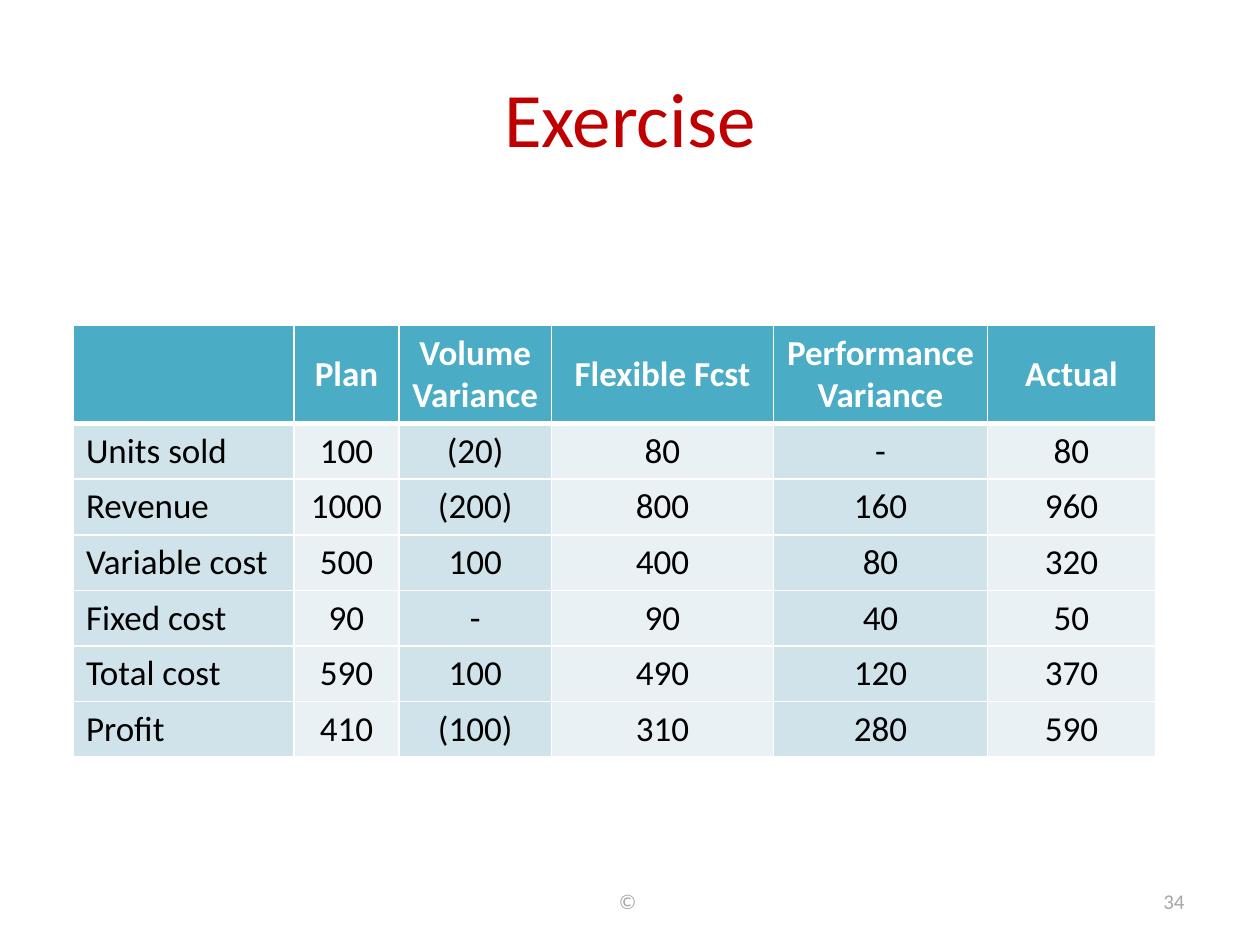
from lxml.etree import SubElement
from pptx import Presentation
from pptx.dml.color import RGBColor
from pptx.enum.text import MSO_ANCHOR as Anchor, PP_ALIGN as Align
from pptx.oxml.ns import qn
from pptx.util import Cm, Pt

FONT = "Calibri"
COLORS = {
    "title": "C00000",
    "footer": "A6A6A6",
    "header": "4BACC6",
    "odd_col": "D0E3EA",
    "even_col": "E9F1F5",
    "white": "FFFFFF",
    "black": "000000",
}
COL_WIDTHS = [4.45, 2.11, 3.08, 4.47, 4.32, 3.38]
HEADER_HEIGHT, ROW_HEIGHT = 1.98, 1.12
ROWS = [
    ["", "Plan", "Volume Variance", "Flexible Fcst", "Performance Variance", "Actual"],
    ["Units sold", "100", "(20)", "80", "-", "80"],
    ["Revenue", "1000", "(200)", "800", "160", "960"],
    ["Variable cost", "500", "100", "400", "80", "320"],
    ["Fixed cost", "90", "-", "90", "40", "50"],
    ["Total cost", "590", "100", "490", "120", "370"],
    ["Profit", "410", "(100)", "310", "280", "590"],
]


def rgb(name):
    return RGBColor.from_string(COLORS[name])


def write(tf, text, size, color, align, bold=False):
    p = tf.paragraphs[0]
    p.alignment = align
    r = p.add_run()
    r.text = text
    r.font.name = FONT
    r.font.size = Pt(size)
    r.font.bold = bold
    r.font.color.rgb = rgb(color)


def add_text(s, x, y, w, h, text, size, color, align):
    tf = s.shapes.add_textbox(Cm(x), Cm(y), Cm(w), Cm(h)).text_frame
    tf.word_wrap = True
    tf.vertical_anchor = Anchor.MIDDLE
    write(tf, text, size, color, align)


def set_borders(cell, top, bottom):
    """Draw white cell borders; top and bottom widths are in points."""
    tc_pr = cell._tc.get_or_add_tcPr()
    for side, width in (("L", 1), ("R", 1), ("T", top), ("B", bottom)):
        ln = SubElement(tc_pr, qn(f"a:ln{side}"), w=str(Pt(width)))
        fill = SubElement(ln, qn("a:solidFill"))
        SubElement(fill, qn("a:srgbClr"), val=COLORS["white"])


def style_cell(cell, row, col, text):
    header = row == 0
    set_borders(cell, 3 if row == 1 else 1, 3 if header else 1)
    cell.fill.solid()
    body_fill = "even_col" if col % 2 else "odd_col"
    cell.fill.fore_color.rgb = rgb("header" if header else body_fill)
    cell.vertical_anchor = Anchor.MIDDLE if header else Anchor.TOP
    if text:
        align = Align.CENTER if header or col else Align.LEFT
        write(cell.text_frame, text, 20, "white" if header else "black", align, header)


def add_variance_table(s, x, y):
    heights = [HEADER_HEIGHT] + [ROW_HEIGHT] * (len(ROWS) - 1)
    table = s.shapes.add_table(
        len(ROWS), len(COL_WIDTHS), Cm(x), Cm(y), Cm(sum(COL_WIDTHS)), Cm(sum(heights))
    ).table
    for column, width in zip(table.columns, COL_WIDTHS):
        column.width = Cm(width)
    for i, (height, values) in enumerate(zip(heights, ROWS)):
        table.rows[i].height = Cm(height)
        for j, text in enumerate(values):
            style_cell(table.cell(i, j), i, j, text)


def main():
    prs = Presentation()
    prs.slide_width, prs.slide_height = Cm(25.4), Cm(19.05)
    s = prs.slides.add_slide(prs.slide_layouts[6])
    add_text(s, 1.27, 0.76, 22.86, 3.18, "Exercise", 44, "title", Align.CENTER)
    add_text(s, 8.68, 17.66, 8.04, 1.01, "© ", 12, "footer", Align.CENTER)
    add_text(s, 18.2, 17.66, 5.93, 1.01, "34", 12, "footer", Align.RIGHT)
    add_variance_table(s, 1.48, 6.56)
    prs.save("out.pptx")


if __name__ == "__main__":
    main()
